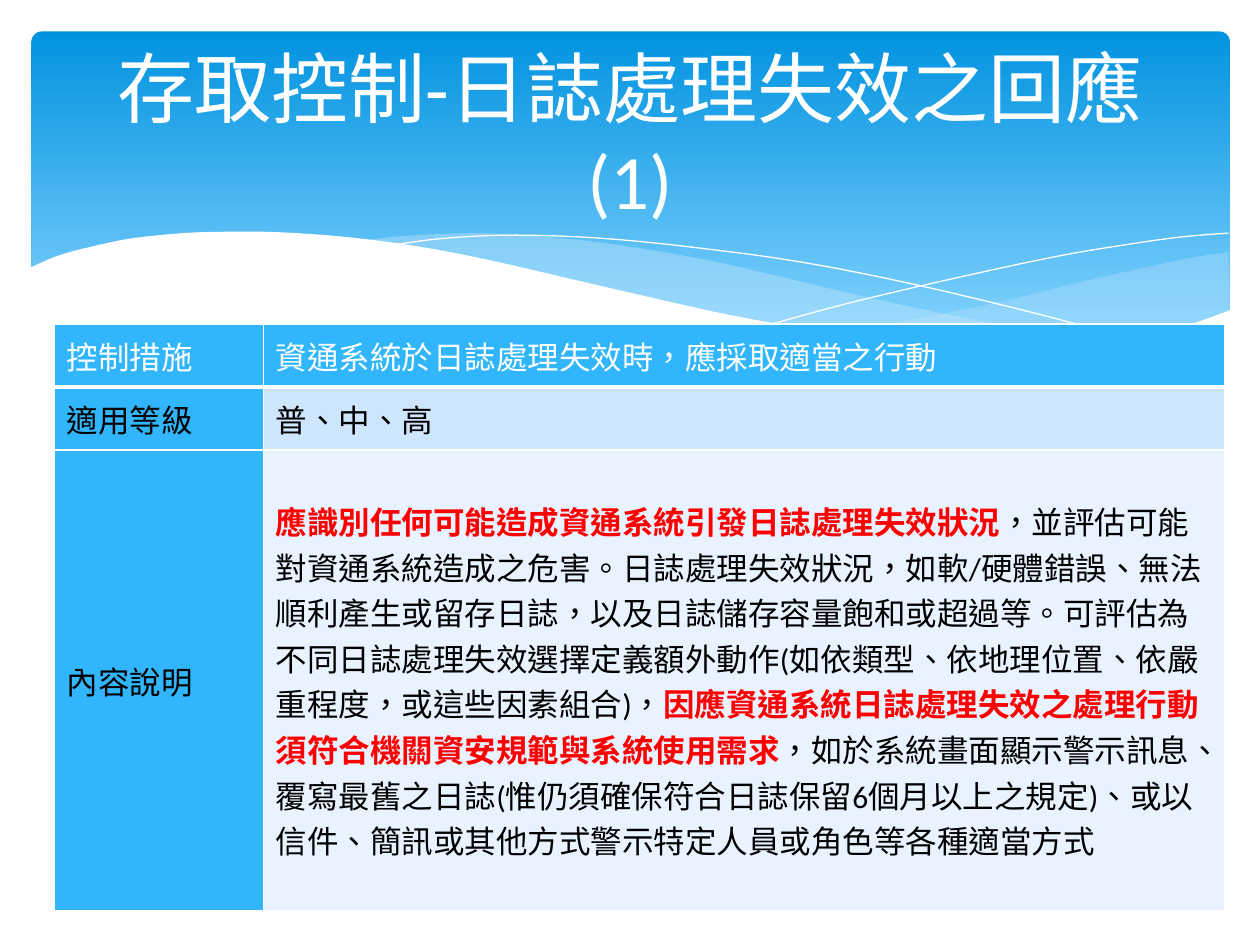
import pptx
import pptx.dml.color
import pptx.enum.dml
import pptx.enum.lang
import pptx.enum.shapes
import pptx.enum.text
import pptx.oxml
import pptx.oxml.ns
import pptx.util

Inches = pptx.util.Inches
Pt = pptx.util.Pt
RGB = pptx.dml.color.RGBColor

WHITE = RGB(0xFF, 0xFF, 0xFF)
BLACK = RGB(0, 0, 0)
RED = RGB(0xFF, 0, 0)
DEEP = RGB(0x02, 0x93, 0xE0)
SKY = RGB(0x83, 0xD3, 0xFE)
MIST = RGB(0xC6, 0xE7, 0xFC)
BLUE = RGB(0x31, 0xB6, 0xFD)
PALE = RGB(0xCE, 0xE5, 0xFE)
LIGHT = RGB(0xE8, 0xF3, 0xFF)
FONT = "Calibri"

# Each wave is a list of curves; a corner stands where two curves meet.
RIGHT = [
    [(9.75, 2), (9.48, 2.04), (9.06, 2.13), (8.61, 2.23), (8.05, 2.37),
     (7.53, 2.48), (7.06, 2.57), (6.61, 2.65)],
    [(6.61, 2.65), (7.05, 2.71), (7.57, 2.76), (8.03, 2.78), (8.54, 2.76),
     (8.97, 2.7), (9.35, 2.62), (9.76, 2.47)],
]
MIDDLE = [
    [(8.93, 2.73), (8.37, 2.65), (7.75, 2.54), (7.06, 2.4), (6.29, 2.22),
     (5.69, 2.08), (5.14, 1.98), (4.65, 1.91), (4.2, 1.87), (3.8, 1.85),
     (3.44, 1.86), (3.13, 1.88), (2.86, 1.91)],
    [(2.86, 1.91), (3.42, 1.99), (4.04, 2.11), (4.49, 2.22), (5.3, 2.4),
     (6.01, 2.55), (6.65, 2.66), (7.22, 2.74), (7.73, 2.77), (8.18, 2.78),
     (8.57, 2.77), (8.93, 2.73)],
]
FALL = [[(3.09, 1.95), (3.44, 1.9), (3.87, 1.87), (4.33, 1.87), (4.89, 1.9),
         (5.56, 1.97), (6.36, 2.08), (7.27, 2.26), (8.31, 2.51), (9.07, 2.72)]]
RISE = [[(6.13, 2.57), (6.72, 2.41), (7.48, 2.23), (8.36, 2.04), (8.95, 1.94),
         (9.38, 1.88), (9.75, 1.85)]]
FRONT = [
    [(9.77, 2.46), (9.4, 2.59), (8.99, 2.69), (8.5, 2.75), (8.09, 2.77),
     (7.61, 2.75), (7.08, 2.7), (6.48, 2.62), (5.79, 2.5), (5.03, 2.33),
     (4.47, 2.2), (3.91, 2.07), (3.4, 1.97), (2.92, 1.9), (2.5, 1.86),
     (2.11, 1.84), (1.77, 1.84), (1.46, 1.85), (1.06, 1.89), (0.76, 1.95),
     (0.46, 2.03), (0.23, 2.13)],
    [(0.23, 3.29), (9.77, 3.29)],
]

ROWS = [
    (0.5, WHITE, BLUE, "控制措施",
     [("資通系統於日誌處理失效時，應採取適當之行動", False)]),
    (0.5, BLACK, PALE, "適用等級", [("普、中、高", False)]),
    (3.66, BLACK, LIGHT, "內容說明", [
        ("應識別任何可能造成資通系統引發日誌處理失效狀況", True),
        ("，並評估可能對資通系統造成之危害。日誌處理失效狀況，如軟/硬體錯誤、"
         "無法順利產生或留存日誌，以及日誌儲存容量飽和或超過等。可評估為不同"
         "日誌處理失效選擇定義額外動作(如依類型、依地理位置、依嚴重程度，"
         "或這些因素組合)，", False),
        ("因應資通系統日誌處理失效之處理行動須符合機關資安規範與系統使用需求",
         True),
        ("，如於系統畫面顯示警示訊息、覆寫最舊之日誌(惟仍須確保符合日誌保留"
         "6個月以上之規定)、或以信件、簡訊或其他方式警示特定人員或角色等"
         "各種適當方式", False),
    ]),
]


def smooth(knots, steps=4):
    """Return points on a Catmull-Rom curve through the knots."""
    ends = [knots[0], *knots, knots[-1]]
    points = [knots[0]]
    for a, b, c, d in zip(ends, ends[1:], ends[2:], ends[3:]):
        for step in range(1, steps + 1):
            t = step / steps
            points.append(tuple(
                (2 * q + (r - p) * t + (2 * p - 5 * q + 4 * r - s) * t ** 2
                 + (3 * q - p - 3 * r + s) * t ** 3) / 2
                for p, q, r, s in zip(a, b, c, d)))
    return points


def add_wave(slide, curves, color=None, alpha=100):
    """Draw a filled wave, or a white hairline when no color is given."""
    points = [(Inches(x), Inches(y)) for curve in curves
              for x, y in smooth(curve)]
    pen = slide.shapes.build_freeform(*points[0])
    pen.add_line_segments(points[1:], close=color is not None)
    wave = pen.convert_to_shape()
    wave.shadow.inherit = False
    if color is None:
        wave.fill.background()
        wave.line.color.rgb = WHITE
        wave.line.width = Pt(0)
        return
    wave.line.fill.background()
    wave.fill.solid()
    wave.fill.fore_color.rgb = color
    if alpha < 100:
        tint = wave.fill._xPr.find(".//" + pptx.oxml.ns.qn("a:srgbClr"))
        node = pptx.oxml.parse_xml(
            f'<a:alpha {pptx.oxml.ns.nsdecls("a")} val="{alpha * 1000}"/>')
        tint.append(node)


def add_banner(slide):
    banner = slide.shapes.add_shape(
        pptx.enum.shapes.MSO_SHAPE.ROUNDED_RECTANGLE,
        Inches(0.25), Inches(0.25), Inches(9.51), Inches(2.7))
    banner.adjustments[0] = 0.03
    banner.shadow.inherit = False
    banner.line.fill.background()
    banner.fill.gradient()
    banner.fill.gradient_angle = 270
    stops = zip(banner.fill.gradient_stops, (DEEP, SKY), (0, 0.9))
    for stop, color, place in stops:
        stop.color.rgb = color
        stop.position = place


def style(run, size, color, bold=False):
    run.font.name = FONT
    run.font.size = Pt(size)
    run.font.bold = bold
    run.font.color.rgb = color
    run.font.language_id = pptx.enum.lang.MSO_LANGUAGE_ID.TRADITIONAL_CHINESE


def add_title(slide, text):
    box = slide.shapes.add_textbox(
        Inches(0.5), Inches(0.37), Inches(9), Inches(1.37))
    frame = box.text_frame
    frame.word_wrap = True
    frame.vertical_anchor = pptx.enum.text.MSO_ANCHOR.MIDDLE
    frame.text = text
    line = frame.paragraphs[0]
    line.alignment = pptx.enum.text.PP_ALIGN.CENTER
    style(line.runs[0], 44, WHITE)


def set_edges(cell, top, bottom):
    """Give the cell white borders, with widths in points."""
    props = cell._tc.get_or_add_tcPr()
    for side, width in zip("LRTB", (1, 1, top, bottom)):
        props.append(pptx.oxml.parse_xml(
            f'<a:ln{side} {pptx.oxml.ns.nsdecls("a")} w="{Pt(width)}">'
            f'<a:solidFill><a:srgbClr val="{WHITE}"/></a:solidFill>'
            f'</a:ln{side}>'))


def fill_cell(cell, parts, color, back):
    cell.fill.solid()
    cell.fill.fore_color.rgb = back
    cell.vertical_anchor = pptx.enum.text.MSO_ANCHOR.MIDDLE
    line = cell.text_frame.paragraphs[0]
    for text, key in parts:
        run = line.add_run()
        run.text = text
        style(run, 18, RED if key else color, key)


def add_grid(slide):
    height = sum(row[0] for row in ROWS)
    grid = slide.shapes.add_table(
        len(ROWS), 2, Inches(0.43), Inches(2.57),
        Inches(9.29), Inches(height)).table
    for column, width in zip(grid.columns, (1.66, 7.63)):
        column.width = Inches(width)
    for i, (tall, color, back, label, parts) in enumerate(ROWS):
        grid.rows[i].height = Inches(tall)
        for j in range(2):
            set_edges(grid.cell(i, j), 3 if i == 1 else 1, 3 if i == 0 else 1)
        fill_cell(grid.cell(i, 0), [(label, False)], color, BLUE)
        fill_cell(grid.cell(i, 1), parts, color, back)


def main():
    deck = pptx.Presentation()
    deck.slide_width, deck.slide_height = Inches(10), Inches(7.5)
    slide = deck.slides.add_slide(deck.slide_layouts[6])
    add_banner(slide)
    add_wave(slide, RIGHT, MIST, 29)
    add_wave(slide, MIDDLE, MIST, 40)
    add_wave(slide, FALL)
    add_wave(slide, RISE)
    add_wave(slide, FRONT, WHITE)
    add_title(slide, "存取控制-日誌處理失效之回應(1)")
    add_grid(slide)
    deck.save("out.pptx")


if __name__ == "__main__":
    main()
